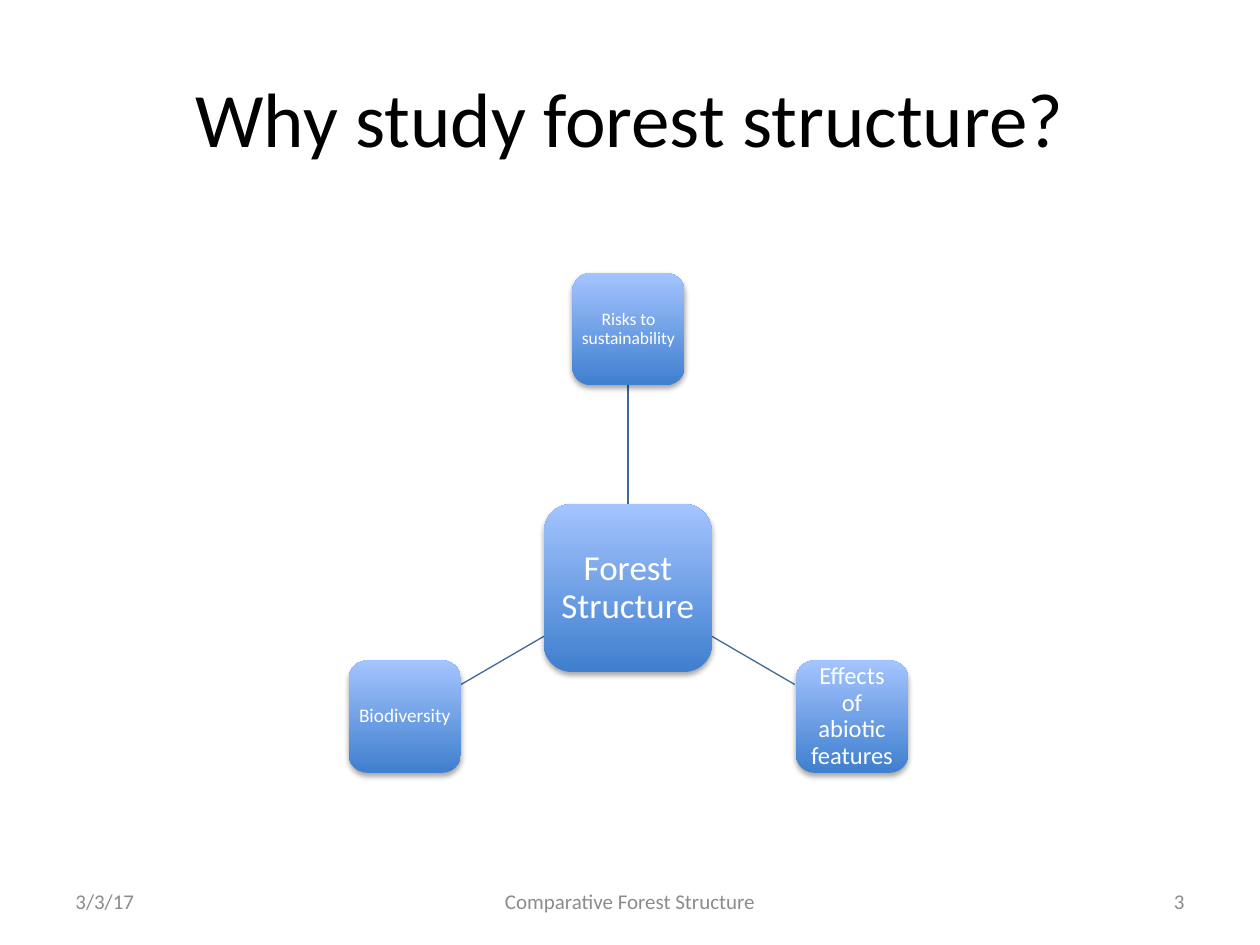
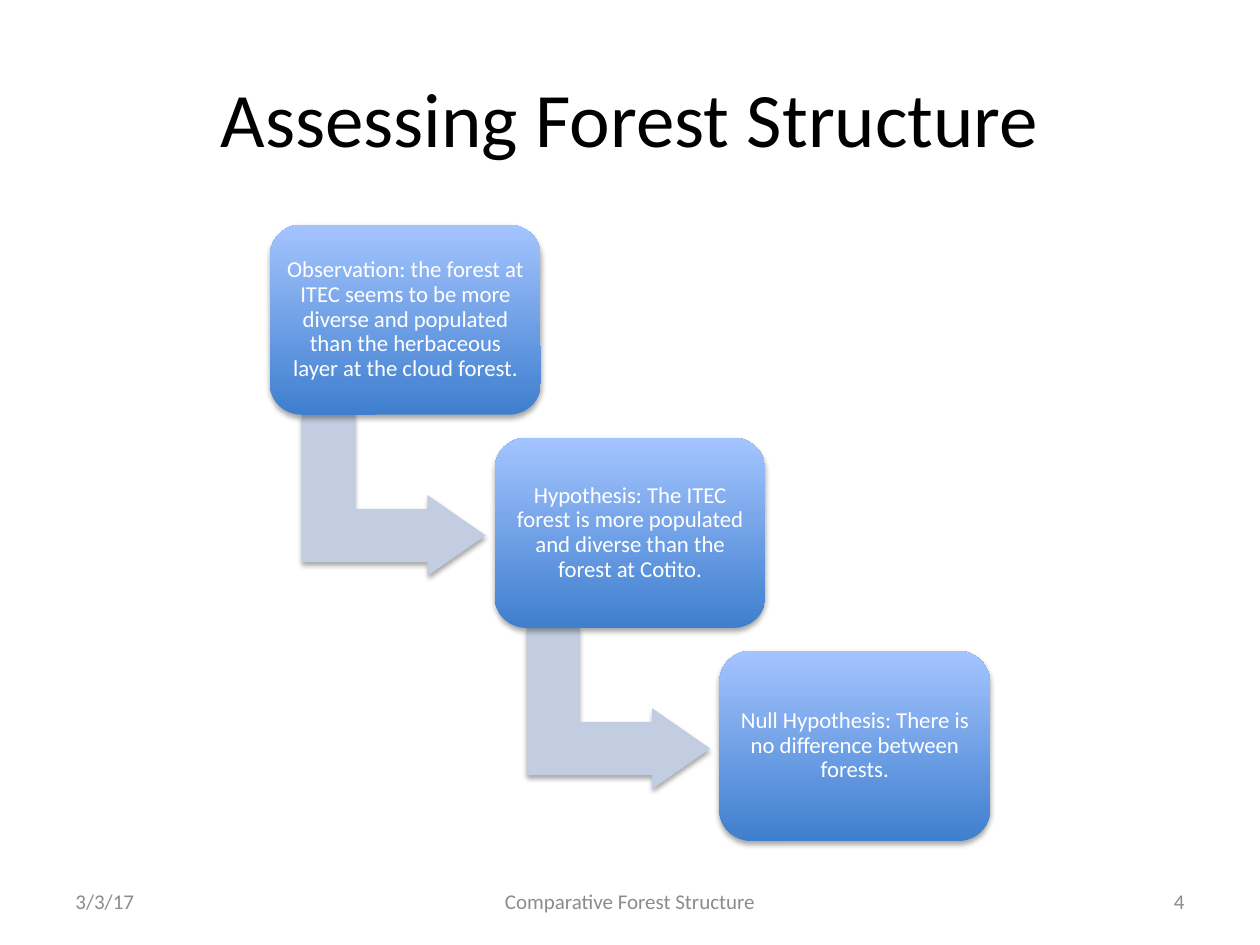
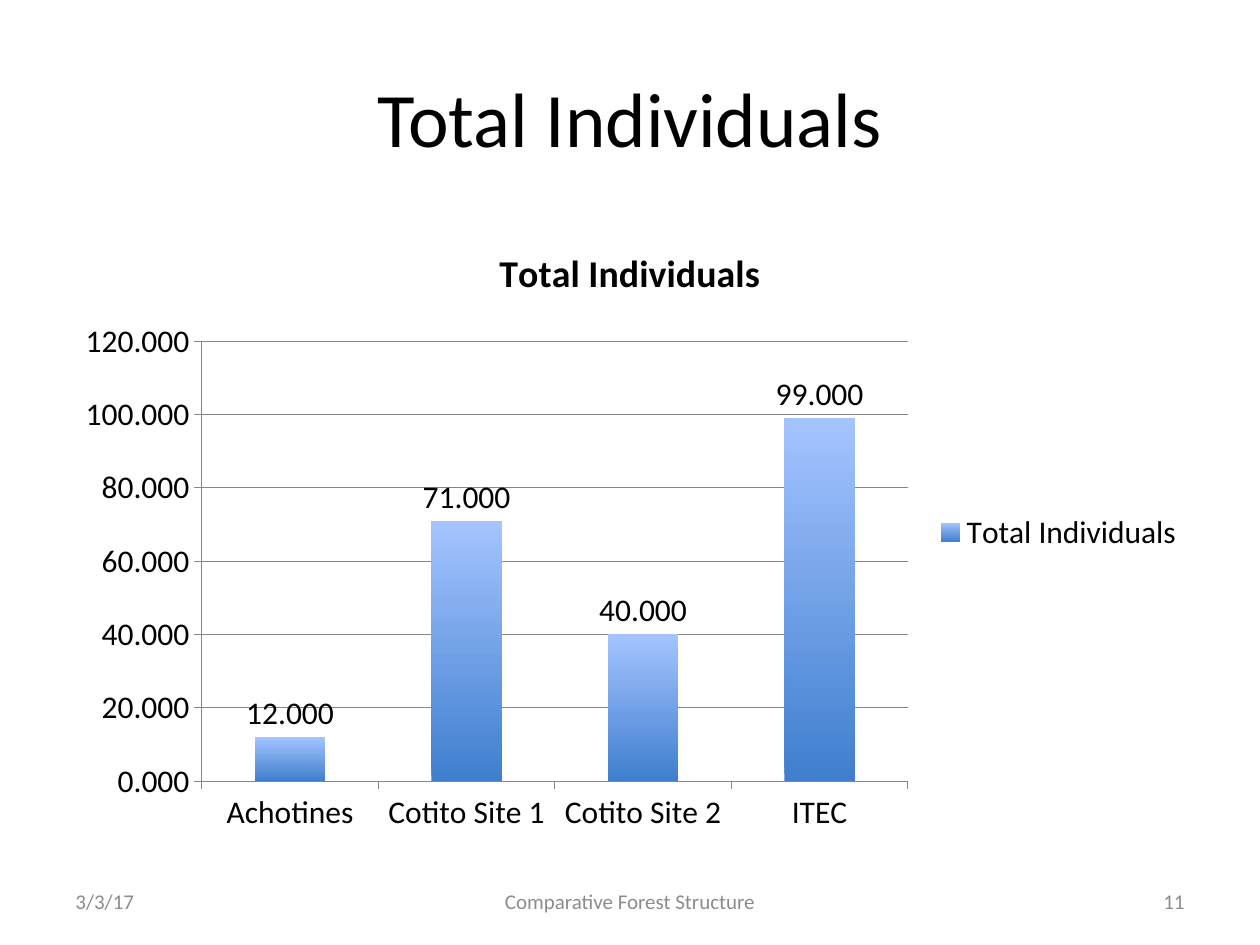
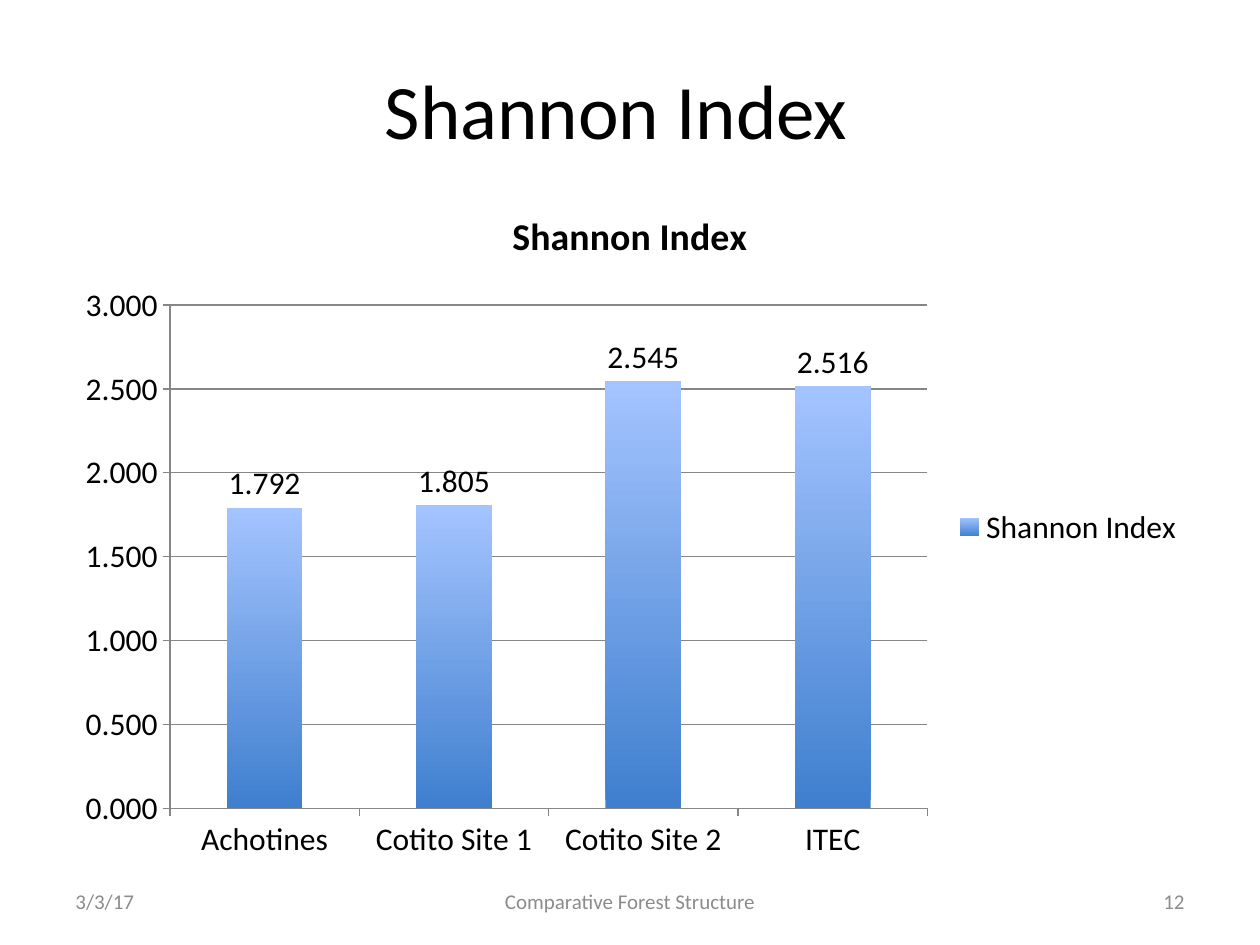
"""Build four slides on comparative forest structure."""
import lxml.etree
import pptx
import pptx.chart.data
import pptx.dml.color
import pptx.enum.chart
import pptx.enum.shapes
import pptx.enum.text
import pptx.oxml
import pptx.oxml.ns
import pptx.util

PX = 7620
FONT = "Calibri"
BLACK, WHITE, FOOTER_GREY, AXIS_GREY = "000000", "FFFFFF", "8C8C8C", "868686"
CARD_BOTTOM, CARD_TOP, SPOKE, ARROW = "3F7FCE", "A4C4FF", "3F6797", "C2CDE1"
LEFT = pptx.enum.text.PP_ALIGN.LEFT
CENTER = pptx.enum.text.PP_ALIGN.CENTER
RIGHT = pptx.enum.text.PP_ALIGN.RIGHT
ROUNDED = pptx.enum.shapes.MSO_SHAPE.ROUNDED_RECTANGLE
SHADOW = (
    f'<a:outerShdw {pptx.oxml.ns.nsdecls("a")} blurRad="39370" dist="22860" dir="5400000"'
    ' rotWithShape="0"><a:srgbClr val="000000"><a:alpha val="35000"/></a:srgbClr></a:outerShdw>'
)


def color(hex_value):
    return pptx.dml.color.RGBColor.from_string(hex_value)


def write(frame, text, size, hex_value, align=CENTER, inset=None, spacing=None):
    frame.text = text
    frame.word_wrap = True
    frame.vertical_anchor = pptx.enum.text.MSO_ANCHOR.MIDDLE
    if inset is not None:
        for side in ("left", "top", "right", "bottom"):
            setattr(frame, f"margin_{side}", inset * PX)
    paragraph = frame.paragraphs[0]
    for name, value in {"alignment": align, "line_spacing": spacing}.items():
        setattr(paragraph, name, value)
    font = paragraph.runs[0].font
    for name, value in {"name": FONT, "size": pptx.util.Pt(size)}.items():
        setattr(font, name, value)
    font.color.rgb = color(hex_value)


deck = pptx.Presentation()
deck.slide_width, deck.slide_height = 1200 * PX, 900 * PX
title_only = deck.slide_layouts[5]
gradient_fills = []
shadowed_shapes = []

slides = []
for heading, number, heading_box in [
    ("Why study forest structure?", "3", (60, 36, 1080, 150)),
    ("Assessing Forest Structure", "4", (60, 36, 1080, 150)),
    ("Total Individuals", "11", (60, 36, 1080, 150)),
    ("Shannon Index", "12", (352, 53, 470, 101)),
]:
    slide = deck.slides.add_slide(title_only)
    slides.append(slide)
    for name, value in zip(("left", "top", "width", "height"), heading_box):
        setattr(slide.shapes.title, name, value * PX)
    write(slide.shapes.title.text_frame, heading, 44, BLACK)
    for footer, left, width, align in [
        ("3/3/17", 60, 280, LEFT),
        ("Comparative Forest Structure", 410, 380, CENTER),
        (number, 860, 280, RIGHT),
    ]:
        footer_box = slide.shapes.add_textbox(left * PX, 834 * PX, width * PX, 48 * PX)
        write(footer_box.text_frame, footer, 12, FOOTER_GREY, align)

why_slide, assessing_slide, individuals_slide, shannon_slide = slides

for start_x, start_y, end_x, end_y in [
    (598, 480, 598, 367),
    (678, 606, 757, 652),
    (518, 606, 439, 652),
]:
    spoke = why_slide.shapes.add_connector(
        pptx.enum.shapes.MSO_CONNECTOR.STRAIGHT,
        start_x * PX, start_y * PX, end_x * PX, end_y * PX,
    )
    spoke.line.color.rgb = color(SPOKE)
    spoke.line.width = pptx.util.Pt(0.75)
    lxml.etree.SubElement(spoke._element.spPr, pptx.oxml.ns.qn("a:effectLst"))

for topic, left, top, side, size, inset in [
    ("Forest Structure", 518, 480, 160, 20, 7),
    ("Risks to sustainability", 545, 260, 107, 10, 4),
    ("Effects of abiotic features", 758, 629, 107, 14, 5),
    ("Biodiversity", 332, 629, 107, 11, 4),
]:
    topic_card = why_slide.shapes.add_shape(ROUNDED, left * PX, top * PX, side * PX, side * PX)
    write(topic_card.text_frame, topic, size, WHITE, inset=inset, spacing=0.9)
    gradient_fills.append(topic_card.fill)
    shadowed_shapes.append(topic_card)

steps = [
    "Observation: the forest at ITEC seems to be more diverse and populated than the "
    "herbaceous layer at the cloud forest.",
    "Hypothesis: The ITEC forest is more populated and diverse than the forest at Cotito.",
    "Null Hypothesis: There is no difference between forests.",
]
for index, step in enumerate(steps):
    shift_x, shift_y = 214 * index, 203 * index
    if index < len(steps) - 1:
        step_arrow = assessing_slide.shapes.add_shape(
            pptx.enum.shapes.MSO_SHAPE.BENT_UP_ARROW,
            (298 + shift_x) * PX, (384 + shift_y) * PX, 154 * PX, 175 * PX,
        )
        step_arrow.rotation = 90
        for position, adjustment in enumerate((0.33, 0.25, 0.36)):
            step_arrow.adjustments[position] = adjustment
        step_arrow.fill.solid()
        step_arrow.fill.fore_color.rgb = color(ARROW)
        shadowed_shapes.append(step_arrow)
    step_card = assessing_slide.shapes.add_shape(
        ROUNDED, (257 + shift_x) * PX, (214 + shift_y) * PX, 258 * PX, 181 * PX
    )
    write(step_card.text_frame, step, 13, WHITE, inset=6, spacing=0.9)
    gradient_fills.append(step_card.fill)
    shadowed_shapes.append(step_card)

for slide, measure, values, top, height, maximum, unit in [
    (individuals_slide, "Total Individuals", (12, 71, 40, 99), 210, 594, 120, 20),
    (shannon_slide, "Shannon Index", (1.792, 1.805, 2.545, 2.516), 173, 658, 3, 0.5),
]:
    site_data = pptx.chart.data.CategoryChartData(number_format="0.000")
    site_data.categories = ["Achotines", "Cotito Site 1", "Cotito Site 2", "ITEC"]
    site_data.add_series(measure, values)
    chart = slide.shapes.add_chart(
        pptx.enum.chart.XL_CHART_TYPE.COLUMN_CLUSTERED,
        60 * PX, top * PX, 1080 * PX, height * PX, site_data,
    ).chart
    chart.font.name = FONT
    chart.font.size = pptx.util.Pt(18)
    chart.font.color.rgb = color(BLACK)
    chart.has_title = True
    write(chart.chart_title.text_frame, measure, 21.6, BLACK)
    chart.chart_title.text_frame.paragraphs[0].runs[0].font.bold = True
    chart.has_legend = True
    chart.legend.position = pptx.enum.chart.XL_LEGEND_POSITION.RIGHT
    chart.legend.include_in_layout = False
    scale = {
        "minimum_scale": 0,
        "maximum_scale": maximum,
        "major_unit": unit,
        "has_major_gridlines": True,
    }
    for name, value in scale.items():
        setattr(chart.value_axis, name, value)
    chart.value_axis.tick_labels.number_format = "0.000"
    chart.value_axis.tick_labels.number_format_is_linked = False
    for axis in (chart.category_axis, chart.value_axis):
        axis.major_tick_mark = pptx.enum.chart.XL_TICK_MARK.OUTSIDE
    for ruled in (chart.category_axis, chart.value_axis, chart.value_axis.major_gridlines):
        ruled.format.line.color.rgb = color(AXIS_GREY)
        ruled.format.line.width = pptx.util.Pt(0.75)
    columns = chart.plots[0]
    columns.gap_width = 150
    columns.vary_by_categories = False
    columns.has_data_labels = True
    label_format = {
        "show_value": True,
        "number_format": "0.000",
        "number_format_is_linked": False,
        "position": pptx.enum.chart.XL_LABEL_POSITION.OUTSIDE_END,
    }
    for name, value in label_format.items():
        setattr(columns.data_labels, name, value)
    gradient_fills.append(columns.series[0].format.fill)

for fill in gradient_fills:
    fill.gradient()
    fill.gradient_angle = 90
    for stop, hex_value in zip(fill.gradient_stops, (CARD_BOTTOM, CARD_TOP)):
        stop.color.rgb = color(hex_value)

for shape in shadowed_shapes:
    shape.line.fill.background()
    shape.shadow.inherit = False
    effects = shape._element.spPr.find(pptx.oxml.ns.qn("a:effectLst"))
    effects.append(pptx.oxml.parse_xml(SHADOW))

deck.save("out.pptx")
